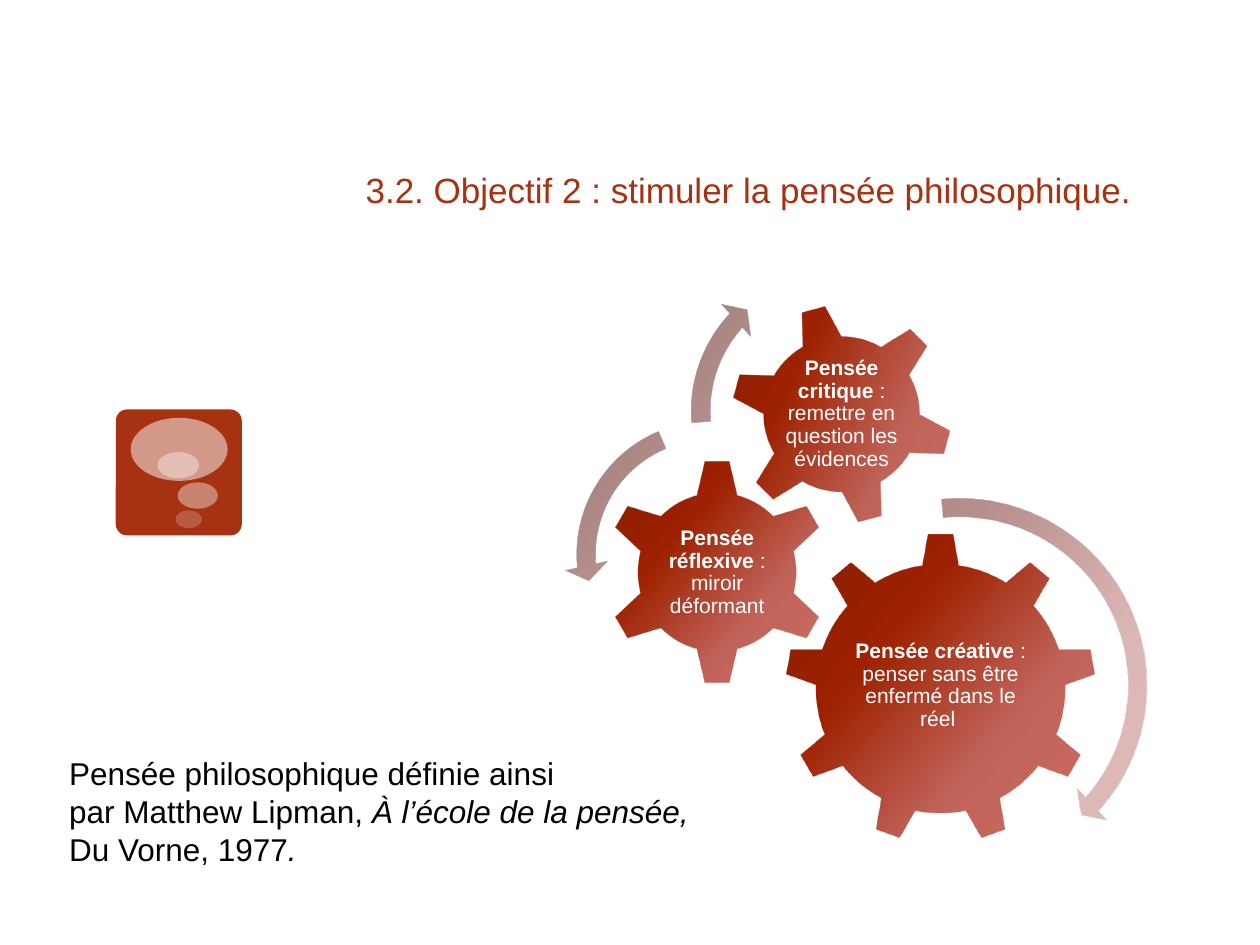
from lxml import etree
from pptx import Presentation
from pptx.dml.color import RGBColor
from pptx.enum.shapes import MSO_SHAPE
from pptx.enum.text import MSO_ANCHOR, MSO_AUTO_SIZE, PP_ALIGN
from pptx.oxml.ns import qn
from pptx.util import Pt

ROUNDED = MSO_SHAPE.ROUNDED_RECTANGLE
OVAL = MSO_SHAPE.OVAL
GEAR_6 = MSO_SHAPE.GEAR_6
GEAR_9 = MSO_SHAPE.GEAR_9
CIRCULAR_ARROW = MSO_SHAPE.CIRCULAR_ARROW
LEFT_CIRCULAR_ARROW = MSO_SHAPE.LEFT_CIRCULAR_ARROW
BOTTOM = MSO_ANCHOR.BOTTOM
MIDDLE = MSO_ANCHOR.MIDDLE
RIGHT = PP_ALIGN.RIGHT
CENTER = PP_ALIGN.CENTER
NO_FIT = MSO_AUTO_SIZE.NONE
GROW = MSO_AUTO_SIZE.SHAPE_TO_FIT_TEXT
TITLE_ONLY = 5

COLORS = {"brick": "A63212", "white": "FFFFFF", "black": "000000"}
GEAR_GRADIENT = [(0, "C6554A", 85), (33, "BE5C52", 95), (67, "9E2200", 100), (100, "881D00", 100)]
ARROW_GRADIENT = [(0, "DDB1AE", 85), (33, "DAB4B2", 95), (67, "B7908D", 100), (100, "9E7D7A", 100)]
GRADIENT_ANGLE = 140

TITLE = "3.2. Objectif 2 : stimuler la pensée philosophique. "
TITLE_BOX = (78.5, 54, 581, 69.8)

ICON_BOX = (66.2, 234, 72, 72)
BUBBLES = [
    ((74.7, 238.8, 55.4, 36), 50),
    ((101.5, 275.6, 23, 15.1), 40),
    ((100.3, 291.7, 15.1, 10.1), 20),
    ((90, 258.3, 23.8, 15.1), 38),
]

GEARS = [
    (GEAR_9, (448.6, 304.6, 177.8), 0, (484.2, 346.2, 106.6, 91.4),
     "Pensée créative ", ": penser sans être enfermé dans le réel "),
    (GEAR_6, (345.1, 262.5, 129.3), 0, (377.8, 295.2, 64.1, 64.1),
     "Pensée réflexive ", ": miroir déformant"),
    (GEAR_6, (417.6, 173.3, 126.7), 345, (445.3, 200.9, 71.3, 71.3),
     "Pensée critique ", ": remettre en question les évidences"),
]
ARROWS = [
    (CIRCULAR_ARROW, (434.9, 277.9, 227.5), (0.047, 2.99, 25.14, 158.66, 0.055)),
    (LEFT_CIRCULAR_ARROW, (322.6, 234, 165.6), (0.065, 4.3, 104.89, 148.38, 0.075)),
    (CIRCULAR_ARROW, (388.1, 145.4, 178.6), (0.06, 3.94, 133.14, 105.08, 0.07)),
]

SOURCE_BOX = (32.4, 427.4, 424, 72.7)
SOURCE_LINES = [
    [("Pensée philosophique définie ainsi", False)],
    [("par Matthew Lipman, ", False), ("À l’école de la pensée,", True)],
    [("Du Vorne, 1977", False), (".", True)],
]


def points(box):
    return [Pt(value) for value in box]


def set_attributes(target, values):
    for name, value in values.items():
        setattr(target, name, value)


def add_run(paragraph, text, color, **font_format):
    run = paragraph.add_run()
    run.text = text
    set_attributes(run.font, {"name": "Arial", **font_format})
    run.font.color.rgb = RGBColor.from_string(COLORS[color])


def set_alpha(color_element, percent):
    if percent < 100:
        etree.SubElement(color_element, qn("a:alpha"), val=str(percent * 1000))


def add_plain_shape(shapes, kind, box):
    shape = shapes.add_shape(kind, *points(box))
    shape.shadow.inherit = False
    shape.line.fill.background()
    return shape


def fill_solid(shape, color, opacity=100):
    shape.fill.solid()
    shape.fill.fore_color.rgb = RGBColor.from_string(COLORS[color])
    set_alpha(next(shape.element.spPr.iter(qn("a:srgbClr"))), opacity)


def fill_gradient(shape, stops):
    shape.fill.gradient()
    shape.fill.gradient_angle = GRADIENT_ANGLE
    stop_list = next(shape.element.spPr.iter(qn("a:gsLst")))
    for old_stop in list(stop_list):
        stop_list.remove(old_stop)
    for position, color, opacity in stops:
        stop = etree.SubElement(stop_list, qn("a:gs"), pos=str(position * 1000))
        set_alpha(etree.SubElement(stop, qn("a:srgbClr"), val=color), opacity)


def add_title(slide):
    title = slide.shapes.title
    title.left, title.top, title.width, title.height = points(TITLE_BOX)
    set_attributes(title.text_frame, {
        "vertical_anchor": BOTTOM, "word_wrap": True, "auto_size": NO_FIT})
    paragraph = title.text_frame.paragraphs[0]
    paragraph.alignment = RIGHT
    add_run(paragraph, TITLE, "brick", size=Pt(20))


def add_icon(slide):
    shapes = slide.shapes.add_group_shape().shapes
    tile = add_plain_shape(shapes, ROUNDED, ICON_BOX)
    tile.adjustments[0] = 0.09
    fill_solid(tile, "brick")
    for box, opacity in BUBBLES:
        fill_solid(add_plain_shape(shapes, OVAL, box), "white", opacity)


def add_gears(slide):
    shapes = slide.shapes.add_group_shape().shapes
    for kind, (left, top, size), rotation, label_box, name, description in GEARS:
        gear = add_plain_shape(shapes, kind, (left, top, size, size))
        gear.rotation = rotation
        fill_gradient(gear, GEAR_GRADIENT)
        frame = shapes.add_textbox(*points(label_box)).text_frame
        set_attributes(frame, {
            "word_wrap": True, "vertical_anchor": MIDDLE,
            **{f"margin_{side}": Pt(1.2) for side in ("left", "top", "right", "bottom")}})
        paragraph = frame.paragraphs[0]
        set_attributes(paragraph, {"alignment": CENTER, "line_spacing": 0.9})
        for text, bold in ((name, True), (description, False)):
            add_run(paragraph, text, "white", size=Pt(12), bold=bold)
    for kind, (left, top, size), adjustments in ARROWS:
        arrow = add_plain_shape(shapes, kind, (left, top, size, size))
        for index, value in enumerate(adjustments):
            arrow.adjustments[index] = value
        fill_gradient(arrow, ARROW_GRADIENT)


def add_source(slide):
    frame = slide.shapes.add_textbox(*points(SOURCE_BOX)).text_frame
    set_attributes(frame, {"word_wrap": False, "auto_size": GROW})
    for index, line in enumerate(SOURCE_LINES):
        paragraph = frame.add_paragraph() if index else frame.paragraphs[0]
        for text, italic in line:
            add_run(paragraph, text, "black", size=Pt(18), italic=italic)


def main():
    presentation = Presentation()
    set_attributes(presentation, {"slide_width": Pt(720), "slide_height": Pt(540)})
    slide = presentation.slides.add_slide(presentation.slide_layouts[TITLE_ONLY])
    for add_part in (add_icon, add_title, add_gears, add_source):
        add_part(slide)
    presentation.save("out.pptx")


if __name__ == "__main__":
    main()
